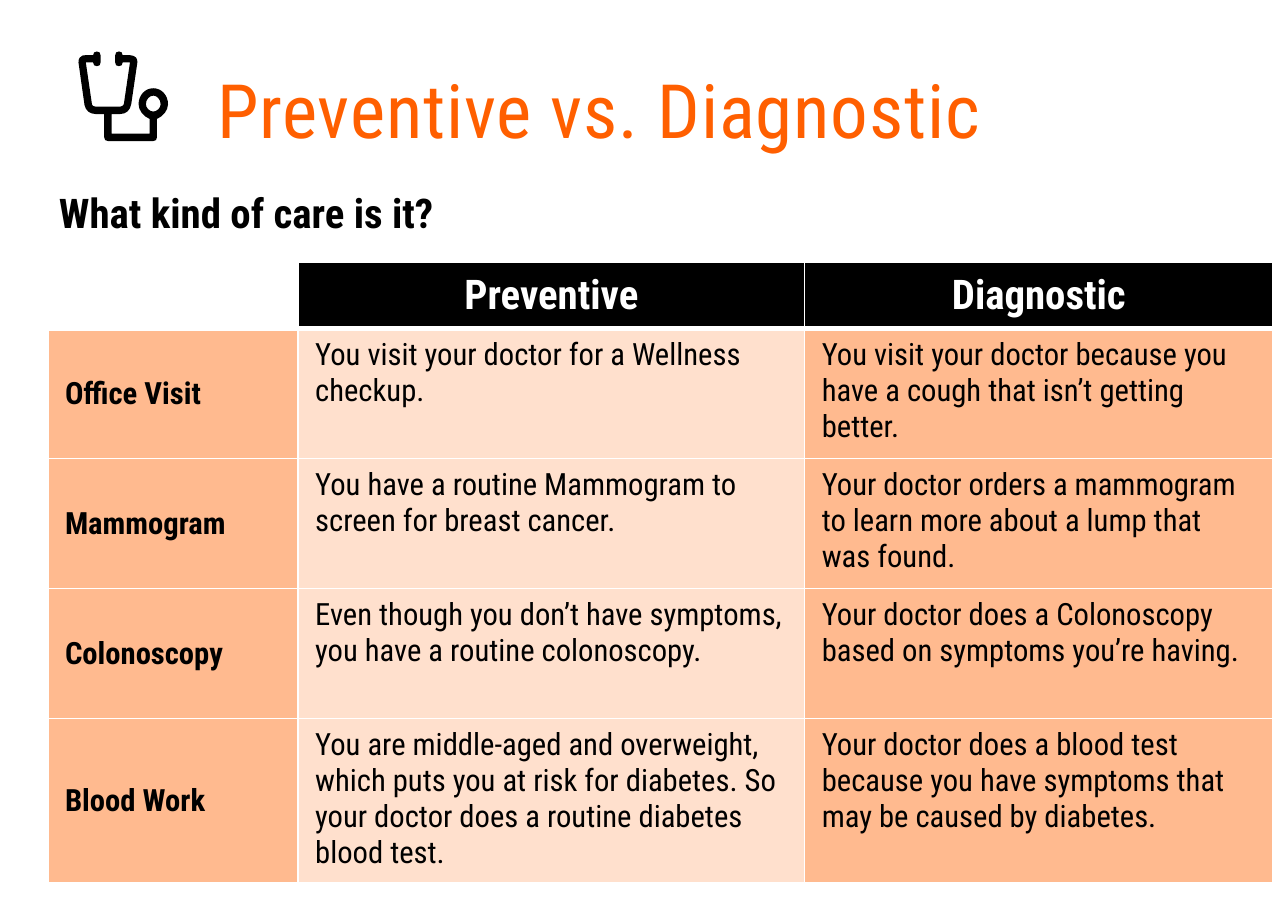
from lxml.etree import SubElement
from pptx import Presentation
from pptx.dml.color import RGBColor
from pptx.enum.text import MSO_ANCHOR, MSO_AUTO_SIZE, PP_ALIGN
from pptx.oxml.ns import qn
from pptx.util import Inches, Pt

FONT = "Roboto Condensed"
BLACK, WHITE, ORANGE = "000000", "FFFFFF", "FF5F00"
PEACH, PALE_PEACH = "FFBA8F", "FFE0CD"
COLUMN_WIDTHS = (2.04, 4.13, 3.82)
HEADER_HEIGHT, ROW_HEIGHT = 0.52, 1.06
CARE_ROWS = (
    ("", "Preventive", "Diagnostic"),
    ("Office Visit", "You visit your doctor for a Wellness checkup.",
     "You visit your doctor because you have a cough that isn’t getting better."),
    ("Mammogram", "You have a routine Mammogram to screen for breast cancer.",
     "Your doctor orders a mammogram to learn more about a lump that was found."),
    ("Colonoscopy", "Even though you don’t have symptoms, you have a routine colonoscopy.",
     "Your doctor does a Colonoscopy based on symptoms you’re having."),
    ("Blood Work", "You are middle-aged and overweight, which puts you at risk for diabetes. "
     "So your doctor does a routine diabetes blood test.",
     "Your doctor does a blood test because you have symptoms that may be caused by diabetes."),
)
STETHOSCOPE_TUBE = (
    (73, 43), (73, 36, 68, 30, 61, 30), (54, 30, 49, 36, 49, 43), (49, 48, 53, 53, 58, 55),
    (58, 67), (27, 67), (27, 51), (34, 51), (39, 51, 42, 48, 43, 43), (48, 9),
    (48, 8, 48, 6, 47, 5), (46, 4, 44, 3, 42, 3), (36, 3), (36, 1, 35, 0, 33, 0),
    (31, 0, 30, 1, 30, 3), (30, 9), (30, 11, 31, 12, 33, 12), (35, 12, 36, 11, 36, 9),
    (42, 9), (37, 43), (37, 44, 35, 45, 34, 45), (14, 45), (12, 45, 11, 44, 11, 43),
    (6, 9), (12, 9), (12, 11, 13, 12, 15, 12), (17, 12, 18, 11, 18, 9), (18, 3),
    (18, 1, 17, 0, 15, 0), (13, 0, 12, 1, 12, 3), (6, 3), (4, 3, 3, 3, 1, 5),
    (0, 6, 0, 8, 0, 9), (5, 44), (6, 48, 9, 51, 14, 51), (21, 51), (21, 70),
    (21, 72, 22, 73, 24, 73), (61, 73), (63, 73, 64, 72, 64, 70), (64, 55),
    (69, 53, 73, 48, 73, 43),
)
STETHOSCOPE_HOLE = (
    (61, 49), (58, 49, 55, 46, 55, 43), (55, 39, 58, 36, 61, 36),
    (64, 36, 67, 39, 67, 43), (67, 46, 64, 49, 61, 49),
)


def color(value):
    """Turn a hex string into a colour."""
    return RGBColor.from_string(value)


def format_paragraph(paragraph, size, hex_color, bold=False):
    """Set the font of a paragraph."""
    font = paragraph.font
    font.name, font.size, font.bold = FONT, Pt(size), bold
    font.color.rgb = color(hex_color)


def set_margins(target, left, top, right, bottom):
    """Set the inner margins of a text frame or cell in inches."""
    target.margin_left, target.margin_top = Inches(left), Inches(top)
    target.margin_right, target.margin_bottom = Inches(right), Inches(bottom)


def bend_segments(shape, segments):
    """Turn the straight segments that have control points into cubic curves."""
    for line, segment in zip(list(shape._element.iter(qn("a:lnTo"))), segments):
        if len(segment) == 6:
            curve = line.getparent().makeelement(qn("a:cubicBezTo"))
            for x, y in zip(segment[::2], segment[1::2]):
                SubElement(curve, qn("a:pt"), x=str(x), y=str(y))
            line.getparent().replace(line, curve)


def add_stethoscope(slide, left, top, width):
    """Draw the stethoscope icon."""
    builder = slide.shapes.build_freeform(*STETHOSCOPE_TUBE[0], scale=Inches(width) / 73)
    builder.add_line_segments([segment[-2:] for segment in STETHOSCOPE_TUBE[1:]])
    builder.move_to(*STETHOSCOPE_HOLE[0])
    builder.add_line_segments([segment[-2:] for segment in STETHOSCOPE_HOLE[1:]])
    shape = builder.convert_to_shape(Inches(left), Inches(top))
    bend_segments(shape, STETHOSCOPE_TUBE[1:] + STETHOSCOPE_HOLE[1:])
    shape.shadow.inherit = False
    shape.fill.solid()
    shape.fill.fore_color.rgb = color(BLACK)
    shape.line.fill.background()


def place_title(slide, left, top, width, height):
    """Place and format the title."""
    title = slide.shapes.title
    title.left, title.top = Inches(left), Inches(top)
    title.width, title.height = Inches(width), Inches(height)
    frame = title.text_frame
    frame.text = "Preventive vs. Diagnostic"
    frame.word_wrap, frame.auto_size = True, MSO_AUTO_SIZE.NONE
    frame.vertical_anchor = MSO_ANCHOR.TOP
    set_margins(frame, 0, 0.05, 0.1, 0.05)
    paragraph = frame.paragraphs[0]
    paragraph.alignment, paragraph.line_spacing = PP_ALIGN.LEFT, 0.83
    format_paragraph(paragraph, 44, ORANGE)
    paragraph.runs[0].font._element.set("spc", "50")


def add_question(slide, left, top, width, height):
    """Add the question above the table."""
    box = slide.shapes.add_textbox(Inches(left), Inches(top), Inches(width), Inches(height))
    frame = box.text_frame
    frame.word_wrap = True
    set_margins(frame, 0, 0, 0, 0)
    frame.text = "What kind of care is it?"
    paragraph = frame.paragraphs[0]
    paragraph.space_before = Pt(6)
    format_paragraph(paragraph, 24, BLACK, bold=True)


def set_borders(cell, row_index):
    """Give a cell white borders, with a thick one below the header."""
    properties = cell._tc.get_or_add_tcPr()
    widths = {"L": 1, "R": 1, "T": 3 if row_index == 1 else 1, "B": 1 if row_index else 3}
    for position, (side, width) in enumerate(widths.items()):
        border = properties.makeelement(qn(f"a:ln{side}"), {"w": str(Pt(width))})
        fill = SubElement(border, qn("a:solidFill"))
        SubElement(fill, qn("a:srgbClr"), val=WHITE)
        properties.insert(position, border)


def fill_cell(cell, text, row_index, column_index):
    """Write and format one cell according to its row and column."""
    is_header, is_label = row_index == 0, column_index == 0
    set_borders(cell, row_index)
    if is_header and is_label:
        cell.fill.background()
        return
    cell.fill.solid()
    body_fill = PALE_PEACH if column_index == 1 else PEACH
    cell.fill.fore_color.rgb = color(BLACK if is_header else body_fill)
    cell.vertical_anchor = MSO_ANCHOR.MIDDLE if is_label else MSO_ANCHOR.TOP
    set_margins(cell, 0.14, 0.07, 0.14, 0.07)
    cell.text = text
    paragraph = cell.text_frame.paragraphs[0]
    paragraph.alignment = PP_ALIGN.CENTER if is_header else PP_ALIGN.LEFT
    format_paragraph(paragraph, 24 if is_header else 18,
                     WHITE if is_header else BLACK, is_header or is_label)


def add_care_table(slide, left, top):
    """Add the table that compares preventive and diagnostic care."""
    height = HEADER_HEIGHT + ROW_HEIGHT * (len(CARE_ROWS) - 1)
    table = slide.shapes.add_table(
        len(CARE_ROWS), len(COLUMN_WIDTHS), Inches(left), Inches(top),
        Inches(sum(COLUMN_WIDTHS)), Inches(height)).table
    table.horz_banding = False
    for column, width in zip(table.columns, COLUMN_WIDTHS):
        column.width = Inches(width)
    for row_index, texts in enumerate(CARE_ROWS):
        table.rows[row_index].height = Inches(ROW_HEIGHT if row_index else HEADER_HEIGHT)
        for column_index, text in enumerate(texts):
            fill_cell(table.cell(row_index, column_index), text, row_index, column_index)


def main():
    """Build the slide and save it."""
    presentation = Presentation()
    presentation.slide_width, presentation.slide_height = Inches(10.5), Inches(7.5)
    slide = presentation.slides.add_slide(presentation.slide_layouts[5])
    add_question(slide, 0.48, 1.53, 4.95, 0.49)
    add_care_table(slide, 0.39, 2.14)
    place_title(slide, 1.77, 0.59, 8.73, 0.5)
    add_stethoscope(slide, 0.64, 0.42, 0.73)
    presentation.save("out.pptx")


if __name__ == "__main__":
    main()
